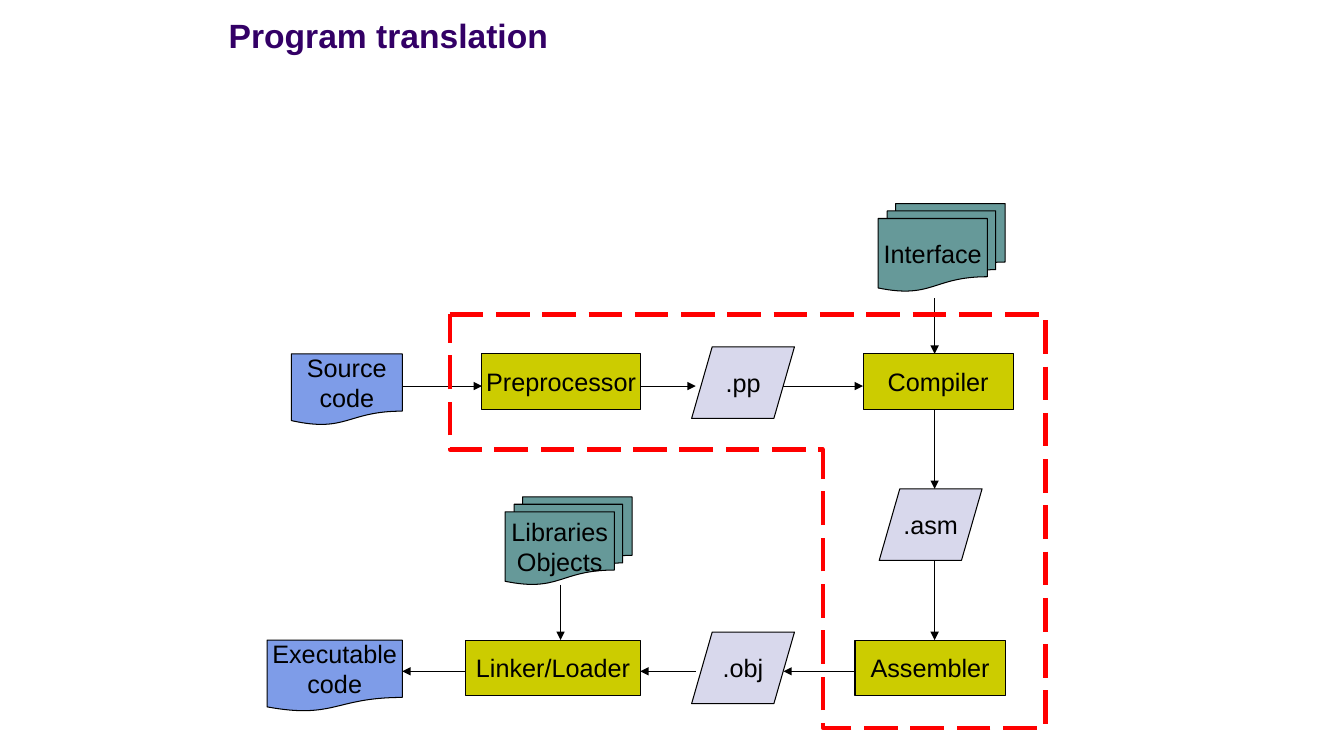
from dataclasses import dataclass

from lxml import etree
from pptx import Presentation
from pptx import util as u
from pptx.dml.color import RGBColor
from pptx.enum import dml, shapes, text
from pptx.oxml.ns import qn


@dataclass(frozen=True)
class Theme:
    font: str = "Arial"
    title_size: int = 24
    label_size: int = 18
    thin: float = 0.75
    thick: float = 3
    title: str = "330066"
    ink: str = "000000"
    tool: str = "CCCC00"
    code: str = "7E9CE8"
    bundle: str = "669999"
    file: str = "D8D8EC"
    boundary: str = "FF0000"


class Diagram:
    def __init__(self, slide, theme):
        self.slide = slide
        self.theme = theme

    def label(self, frame, words, size, color, bold=False):
        frame.text = words
        for paragraph in frame.paragraphs:
            for run in paragraph.runs:
                run.font.name = self.theme.font
                run.font.size = u.Pt(size)
                run.font.bold = bold
                run.font.color.rgb = RGBColor.from_string(color)

    def stroke(self, line, color, width):
        line.color.rgb = RGBColor.from_string(color)
        line.width = u.Pt(width)

    def title(self, words, left, top, width, height):
        box = self.slide.shapes.add_textbox(*map(u.Inches, (left, top, width, height)))
        frame = box.text_frame
        frame.word_wrap = True
        frame.vertical_anchor = text.MSO_ANCHOR.BOTTOM
        self.label(frame, words, self.theme.title_size, self.theme.title, True)

    def node(self, preset, fill, words, left, top, width, height):
        node = self.slide.shapes.add_shape(
            preset, *map(u.Inches, (left, top, width, height)))
        node.shadow.inherit = False
        node.fill.solid()
        node.fill.fore_color.rgb = RGBColor.from_string(fill)
        self.stroke(node.line, self.theme.ink, self.theme.thin)
        frame = node.text_frame
        frame.word_wrap = False
        frame.vertical_anchor = text.MSO_ANCHOR.MIDDLE
        self.label(frame, words, self.theme.label_size, self.theme.ink)
        frame.paragraphs[0].alignment = text.PP_ALIGN.CENTER

    def tool(self, words, left, top, width):
        self.node(shapes.MSO_SHAPE.RECTANGLE, self.theme.tool,
                  words, left, top, width, 0.55)

    def code(self, words, left, top, width):
        self.node(shapes.MSO_SHAPE.FLOWCHART_DOCUMENT, self.theme.code,
                  words, left, top, width, 0.71)

    def bundle(self, words, left, top):
        self.node(shapes.MSO_SHAPE.FLOWCHART_MULTIDOCUMENT, self.theme.bundle,
                  words, left, top, 1.26, 0.87)

    def file(self, words, left, top):
        self.node(shapes.MSO_SHAPE.FLOWCHART_DATA, self.theme.file,
                  words, left, top, 1.02, 0.71)

    def arrow(self, x1, y1, x2, y2):
        arrow = self.slide.shapes.add_connector(
            shapes.MSO_CONNECTOR.STRAIGHT, *map(u.Inches, (x1, y1, x2, y2)))
        self.stroke(arrow.line, self.theme.ink, self.theme.thin)
        properties = arrow._element.spPr
        etree.SubElement(properties.find(qn("a:ln")), qn("a:tailEnd"), type="triangle")
        etree.SubElement(properties, qn("a:effectLst"))

    def boundary(self, corners):
        start, *others = [tuple(map(u.Inches, corner)) for corner in corners]
        builder = self.slide.shapes.build_freeform(*start)
        builder.add_line_segments(others, close=True)
        outline = builder.convert_to_shape()
        outline.shadow.inherit = False
        outline.fill.background()
        self.stroke(outline.line, self.theme.boundary, self.theme.thick)
        outline.line.dash_style = dml.MSO_LINE.LONG_DASH


def main():
    deck = Presentation()
    deck.slide_width, deck.slide_height = u.Inches(13.33), u.Inches(7.5)
    diagram = Diagram(deck.slides.add_slide(deck.slide_layouts[6]), Theme())

    diagram.title("Program translation", 2.17, 0.13, 9, 0.47)

    upper_row, lower_row = 3.51, 6.35
    for words, left, top, width in (
        ("Preprocessor", 4.78, upper_row, 1.57),
        ("Compiler", 8.56, upper_row, 1.49),
        ("Assembler", 8.48, lower_row, 1.49),
        ("Linker/Loader", 4.62, lower_row, 1.73),
    ):
        diagram.tool(words, left, top, width)

    diagram.code("Source\vcode", 2.89, upper_row, 1.1)
    diagram.code("Executable\vcode", 2.65, lower_row, 1.34)
    diagram.bundle("Libraries\vObjects", 5.01, 4.93)
    diagram.bundle("Interface", 8.71, 2.02)
    diagram.file(".pp", 6.86, 3.44)
    diagram.file(".asm", 8.72, 4.85)
    diagram.file(".obj", 6.86, 6.27)

    upper_flow, lower_flow = 3.83, 6.66
    for start, end in ((3.99, 4.78), (6.35, 6.9), (7.77, 8.56)):
        diagram.arrow(start, upper_flow, end, upper_flow)
    for start, end in ((8.48, 7.77), (6.9, 6.35), (4.62, 3.99)):
        diagram.arrow(start, lower_flow, end, lower_flow)

    compile_flow, link_flow = 9.27, 5.56
    for start, end in ((2.96, upper_row), (4.07, 4.85), (5.56, lower_row)):
        diagram.arrow(compile_flow, start, compile_flow, end)
    diagram.arrow(link_flow, 5.8, link_flow, lower_row)

    diagram.boundary([(4.46, 3.12), (10.37, 3.12), (10.37, 7.22),
                      (8.16, 7.22), (8.16, 4.46), (4.46, 4.46)])

    deck.save("out.pptx")


if __name__ == "__main__":
    main()
